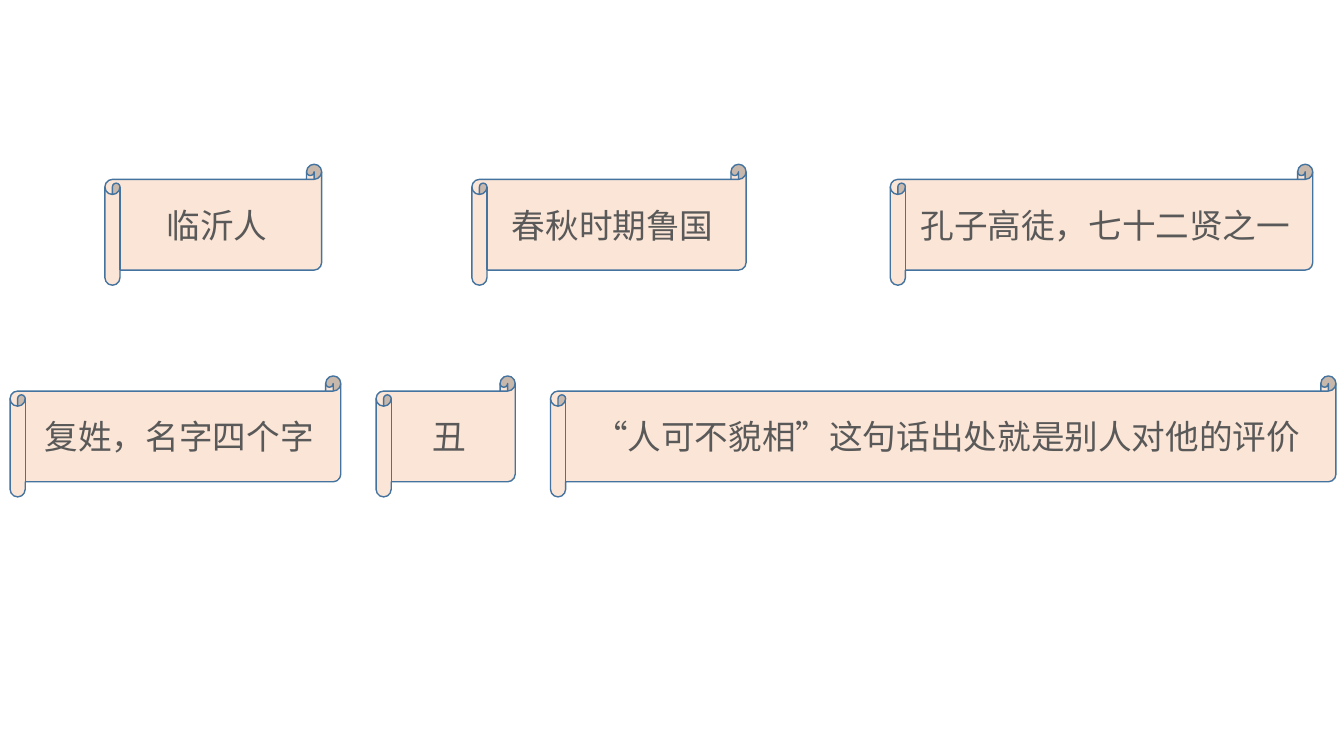
"""Build a slide of six scroll-shaped clues about a disciple of Confucius."""
from dataclasses import dataclass

from lxml import etree
from pptx import Presentation
from pptx.dml.color import RGBColor
from pptx.enum.lang import MSO_LANGUAGE_ID
from pptx.enum.shapes import MSO_SHAPE
from pptx.enum.text import MSO_ANCHOR, PP_ALIGN
from pptx.oxml.ns import qn
from pptx.util import Inches, Pt

SCROLL = MSO_SHAPE.HORIZONTAL_SCROLL
MIDDLE = MSO_ANCHOR.MIDDLE
CENTER = PP_ALIGN.CENTER
CHINESE = MSO_LANGUAGE_ID.SIMPLIFIED_CHINESE


@dataclass(frozen=True)
class Theme:
    fill: RGBColor = RGBColor.from_string("FBE5D6")
    line: RGBColor = RGBColor.from_string("43739E")
    text: RGBColor = RGBColor.from_string("595959")
    font: str = "Noto Sans CJK JP"
    size: int = 24
    line_width: int = 1


THEME = Theme()


def write(tf, text, size=THEME.size, color=THEME.text, font=THEME.font, align=CENTER):
    p = tf.paragraphs[0]
    p.alignment = align
    r = p.add_run()
    r.text = text
    r.font.size = Pt(size)
    r.font.color.rgb = color
    r.font.name = font
    r.font.language_id = CHINESE
    etree.SubElement(r.font._element, qn("a:ea"), typeface=font)


prs = Presentation()
prs.slide_width = Inches(13.33)
prs.slide_height = Inches(7.5)
s = prs.slides.add_slide(prs.slide_layouts[6])

SCROLL_HEIGHT = 1.2
CLUE_ROWS = {
    1.63: [
        (1.04, 2.15, "临沂人"),
        (4.68, 2.72, "春秋时期鲁国"),
        (8.83, 4.19, "孔子高徒，七十二贤之一"),
    ],
    3.73: [
        (0.1, 3.28, "复姓，名字四个字"),
        (3.73, 1.38, "丑"),
        (5.46, 7.79, "“人可不貌相”这句话出处就是别人对他的评价"),
    ],
}

for top, clues in CLUE_ROWS.items():
    for left, width, text in clues:
        sp = s.shapes.add_shape(
            SCROLL, Inches(left), Inches(top), Inches(width), Inches(SCROLL_HEIGHT)
        )
        sp.shadow.inherit = False
        sp.fill.solid()
        sp.fill.fore_color.rgb = THEME.fill
        sp.line.color.rgb = THEME.line
        sp.line.width = Pt(THEME.line_width)
        tf = sp.text_frame
        tf.word_wrap = True
        tf.vertical_anchor = MIDDLE
        write(tf, text)

prs.save("out.pptx")
